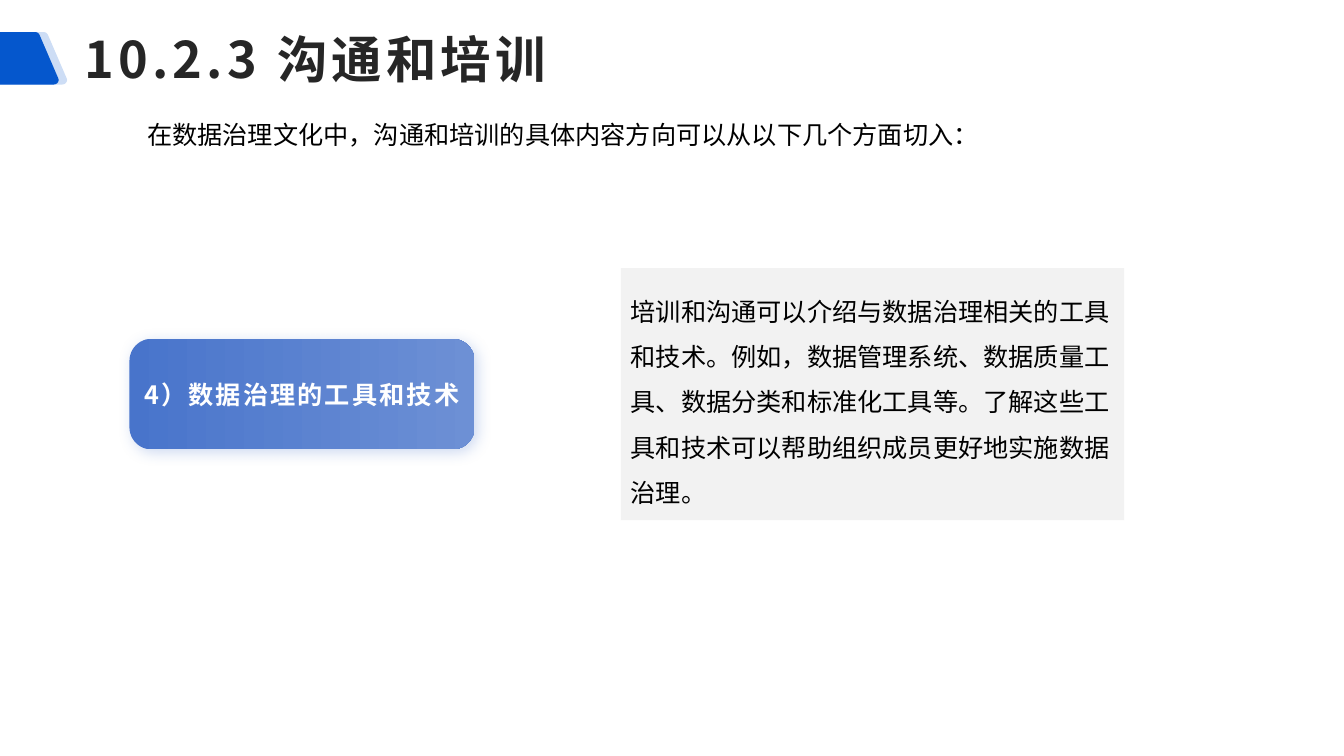
from lxml.etree import SubElement as Sub
from pptx import Presentation
from pptx.dml.color import RGBColor as RGB
from pptx.enum.shapes import MSO_SHAPE as SHAPE
from pptx.enum.text import MSO_ANCHOR as ANCHOR, PP_ALIGN as ALIGN
from pptx.oxml.ns import qn
from pptx.util import Pt

HUES = {
    "tab": "0557CD", "title": "262626", "text": "000000", "white": "FFFFFF",
    "panel": "F2F2F2", "start": "4874CB", "end": "6D90D5",
}
NOTO = "Noto Sans CJK SC"
WIDE = 60  # width of the title tab


def hue(name):
    return RGB.from_string(HUES[name])


def curve(ends, steps=8):
    """Points along a cubic curve given by its four control points."""
    rows = []
    for i in range(steps + 1):
        t = i / steps
        parts = ((1 - t) ** 3, 3 * t * (1 - t) ** 2, 3 * t * t * (1 - t), t ** 3)
        rows.append(tuple(sum(w * p[k] for w, p in zip(parts, ends))
                          for k in (0, 1)))
    return rows


def add_tab(slide, left, top, alpha=None):
    """Rounded trapezoid, symmetric about its middle."""
    half = (curve([(3.6, 37.4), (1, 37.4), (-0.9, 34.8), (0.6, 32.4)])
            + curve([(13.6, 2.2), (14.2, 0.9), (15.2, 0), (16.6, 0)]))
    dots = half + [(WIDE - x, y) for x, y in reversed(half)]
    dots = [(Pt(left + x), Pt(top + y)) for x, y in dots]
    form = slide.shapes.build_freeform(*dots[0])
    form.add_line_segments(dots[1:], close=True)
    tab = form.convert_to_shape()
    tab.shadow.inherit = False
    tab.line.fill.background()
    tab.fill.solid()
    tab.fill.fore_color.rgb = hue("tab")
    if alpha:
        tint = tab._element.spPr.find(".//" + qn("a:srgbClr"))
        Sub(tint, qn("a:alpha"), val=str(alpha * 1000))


def write(shape, text, size, color, font=NOTO, bold=False, gap=0,
          align=ALIGN.LEFT, anchor=ANCHOR.MIDDLE, lead=None):
    frame = shape.text_frame
    frame.word_wrap = True
    frame.vertical_anchor = anchor
    para = frame.paragraphs[0]
    para.text = text
    para.alignment = align
    if lead:
        para.line_spacing = lead
    face = para.font
    face.size, face.bold, face.name = Pt(size), bold, font
    face.color.rgb = hue(color)
    # East Asian face and letter spacing
    Sub(face._rPr, qn("a:ea"), typeface=NOTO)
    if gap:
        face._rPr.set("spc", str(int(gap * 100)))


def add_text(slide, box, text, size, color, **look):
    write(slide.shapes.add_textbox(*map(Pt, box)), text, size, color, **look)


def add_box(slide, kind, box):
    shape = slide.shapes.add_shape(kind, *map(Pt, box))
    shape.shadow.inherit = False
    shape.line.fill.background()
    return shape


def add_panel(slide, box, text):
    panel = add_box(slide, SHAPE.RECTANGLE, box)
    panel.fill.solid()
    panel.fill.fore_color.rgb = hue("panel")
    write(panel, text, 18, "text", font="Times New Roman", lead=1.5)


def add_badge(slide, box, text):
    badge = add_box(slide, SHAPE.ROUNDED_RECTANGLE, box)
    badge.adjustments[0] = 0.2
    badge.fill.gradient()
    badge.fill.gradient_angle = 0
    for stop, name in zip(badge.fill.gradient_stops, ("start", "end")):
        stop.color.rgb = hue(name)
    # Soft shadow, down and to the right
    glow = Sub(badge._element.spPr.find(qn("a:effectLst")), qn("a:outerShdw"),
               blurRad=str(Pt(10)), dist=str(Pt(3)), dir="2700000",
               algn="tl", rotWithShape="0")
    tint = Sub(glow, qn("a:srgbClr"), val=HUES["start"])
    Sub(tint, qn("a:alpha"), val="25000")
    frame = badge.text_frame
    frame.margin_left = frame.margin_right = 0
    frame.margin_top = frame.margin_bottom = 0
    write(badge, text, 18, "white", bold=True, gap=1.5, align=ALIGN.CENTER)


def main():
    deck = Presentation()
    deck.slide_width, deck.slide_height = Pt(960), Pt(540)
    slide = deck.slides.add_slide(deck.slide_layouts[6])

    # Heading
    add_tab(slide, -12, 23, alpha=20)
    add_tab(slide, -18, 23)
    add_text(slide, (53.3, 6, 906.7, 72), "10.2.3 沟通和培训", 36, "title",
             bold=True, gap=3)

    # Topic and its explanation
    add_badge(slide, (92.5, 242, 246.5, 79), "4）数据治理的工具和技术")
    add_panel(slide, (443.5, 191.5, 359.5, 180),
              "培训和沟通可以介绍与数据治理相关的工具和技术。"
              "例如，数据管理系统、数据质量工具、数据分类和标准化工具等。"
              "了解这些工具和技术可以帮助组织成员更好地实施数据治理。")

    # Lead-in
    add_text(slide, (98, 81.5, 708, 29),
             "在数据治理文化中，沟通和培训的具体内容方向可以从以下几个方面切入：",
             18, "text", font="Arial", anchor=ANCHOR.TOP)

    deck.save("out.pptx")


if __name__ == "__main__":
    main()
